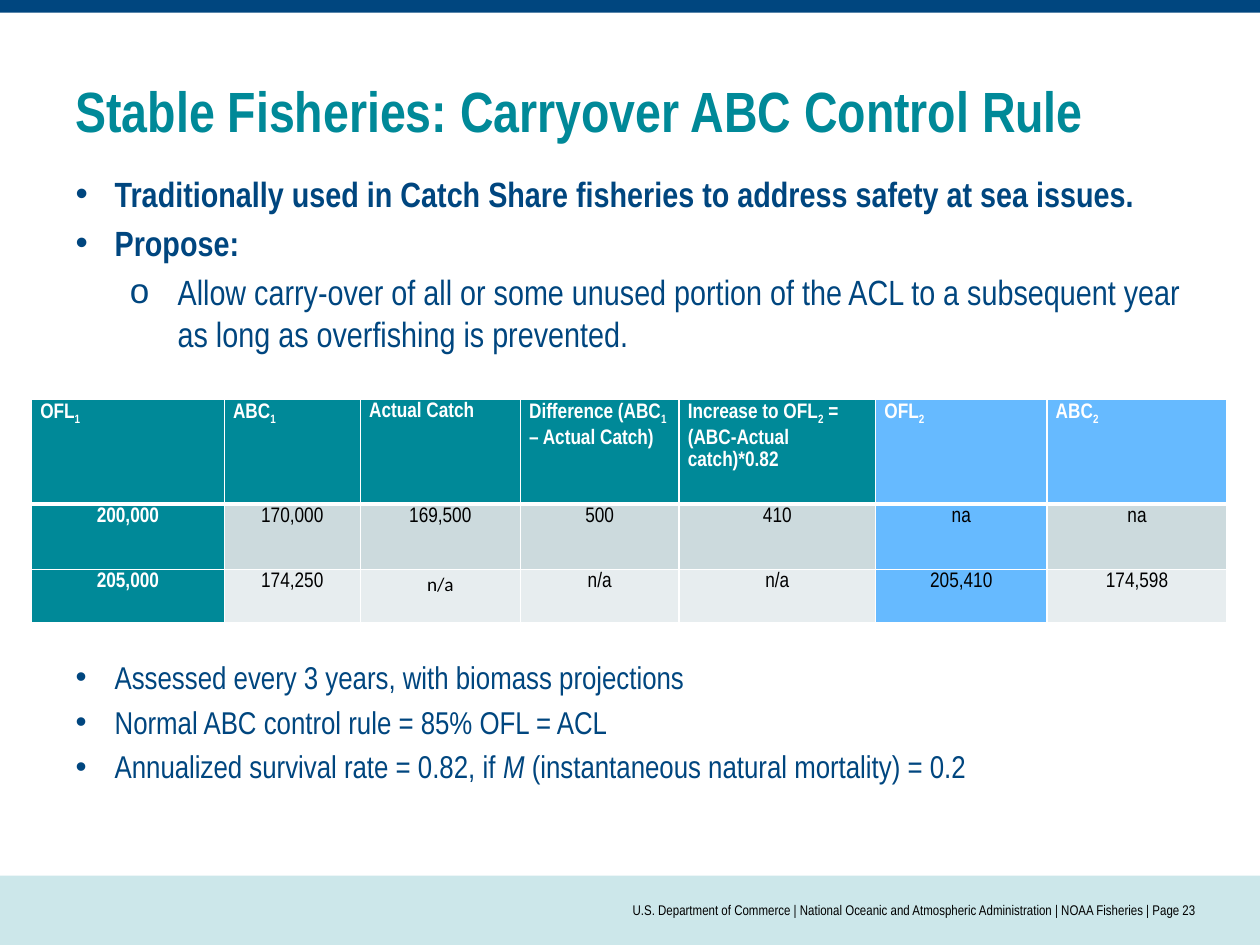
from pptx import Presentation
from pptx.dml.color import RGBColor
from pptx.enum.shapes import MSO_SHAPE
from pptx.enum.text import MSO_ANCHOR, MSO_AUTO_SIZE, PP_ALIGN
from pptx.oxml import parse_xml
from pptx.oxml.ns import nsdecls
from pptx.util import Inches, Pt

NAVY = RGBColor(0x00, 0x46, 0x7F)
TEAL = RGBColor(0x00, 0x89, 0x98)
PALE = RGBColor(0xCC, 0xE7, 0xEA)
BLUE = RGBColor(0x66, 0xBA, 0xFF)
GREY = RGBColor(0xCC, 0xDA, 0xDD)
LIGHT = RGBColor(0xE7, 0xED, 0xEF)
WHITE = RGBColor(0xFF, 0xFF, 0xFF)
BLACK = RGBColor(0x00, 0x00, 0x00)
FACE = "Arial Narrow"

WIDTHS = [1.53, 1.08, 1.27, 1.26, 1.56, 1.36, 1.43]
HEIGHTS = [0.83, 0.52, 0.42]
ROWS = [
    ["OFL|1", "ABC|1", "Actual Catch", "Difference (ABC|1| – Actual Catch)",
     "Increase to OFL|2| = (ABC-Actual catch)*0.82", "OFL|2", "ABC|2"],
    ["200,000", "170,000", "169,500", "500", "410", "na", "na"],
    ["205,000", "174,250", "n/a", "n/a", "n/a", "205,410", "174,598"],
]
RULES = [
    ("Traditionally used in Catch Share fisheries to address safety at sea issues.", 0, True),
    ("Propose:", 0, True),
    ("Allow carry-over of all or some unused portion of the ACL to a "
     "subsequent year as long as overfishing is prevented.", 1, False),
]
NOTES = [
    ("Assessed every 3 years, with biomass projections", 0, False),
    ("Normal ABC control rule = 85% OFL = ACL", 0, False),
    ("Annualized survival rate = 0.82, if |M| (instantaneous natural mortality) = 0.2", 0, False),
]
LEVELS = [("•", 0.31, 0.31), ("o", 0.81, 0.38)]


def place(shape, left, top, width, height):
    shape.left, shape.top = Inches(left), Inches(top)
    shape.width, shape.height = Inches(width), Inches(height)


def style(font, size, color, bold=False, face=FACE):
    font.size, font.name, font.bold = Pt(size), face, bold
    font.color.rgb = color


def write(para, text, size, color, bold=False, face=FACE):
    marked = []
    for i, part in enumerate(text.split("|")):
        run = para.add_run()
        run.text = part
        style(run.font, size, color, bold, face)
        if i % 2:
            marked.append(run)
    return marked


def add_bar(slide, top, height, color):
    bar = slide.shapes.add_shape(
        MSO_SHAPE.RECTANGLE, 0, Inches(top), Inches(10), Inches(height))
    bar.shadow.inherit = False
    bar.fill.solid()
    bar.fill.fore_color.rgb = color
    bar.line.fill.background()


def set_title(slide, text):
    title = slide.shapes.title
    place(title, 0.5, 0.5, 9, 0.74)
    frame = title.text_frame
    frame.text = text
    frame.auto_size = MSO_AUTO_SIZE.NONE
    frame.vertical_anchor = MSO_ANCHOR.MIDDLE
    para = frame.paragraphs[0]
    para.alignment = PP_ALIGN.LEFT
    style(para.runs[0].font, 32.4, TEAL, True)


def set_list(body, top, height, items, size):
    place(body, 0.5, top, 9, height)
    frame = body.text_frame
    frame.auto_size = MSO_AUTO_SIZE.NONE
    for i, (text, level, bold) in enumerate(items):
        para = frame.add_paragraph() if i else frame.paragraphs[0]
        para.level = level
        para.space_before = Pt(4 if i else 0)
        mark, left, hang = LEVELS[level]
        props = para._p.get_or_add_pPr()
        props.set("marL", str(Inches(left)))
        props.set("indent", str(-Inches(hang)))
        props.append(parse_xml(f'<a:buChar {nsdecls("a")} char="{mark}"/>'))
        for run in write(para, text, size, NAVY, bold):
            run.font.italic = True


def add_edges(cell, row):
    props = cell._tc.get_or_add_tcPr()
    for side in "LRTB":
        thick = (row, side) in ((0, "B"), (1, "T"))
        props.append(parse_xml(
            f'<a:ln{side} {nsdecls("a")} w="{Pt(3 if thick else 1)}"><a:solidFill>'
            f'<a:srgbClr val="{WHITE}"/></a:solidFill></a:ln{side}>'))


def pick_fill(row, col):
    if col == 5 or (row == 0 and col > 5):
        return BLUE
    if row == 0 or col == 0:
        return TEAL
    return GREY if row == 1 else LIGHT


def set_cell(cell, row, col, text):
    cell.margin_left = cell.margin_right = Inches(0.07)
    cell.margin_top = cell.margin_bottom = 0
    add_edges(cell, row)
    cell.fill.solid()
    cell.fill.fore_color.rgb = pick_fill(row, col)
    para = cell.text_frame.paragraphs[0]
    para.line_spacing = 1.15
    para.alignment = PP_ALIGN.CENTER if row else PP_ALIGN.LEFT
    head = row == 0 or col == 0
    size, face = (11, "Calibri") if (row, col) == (2, 2) else (12, FACE)
    for run in write(para, text, size, WHITE if head else BLACK, head, face):
        run._r.get_or_add_rPr().set("baseline", "-25000")


def add_grid(slide):
    table = slide.shapes.add_table(
        len(ROWS), len(WIDTHS), Inches(0.25), Inches(3.17),
        Inches(sum(WIDTHS)), Inches(sum(HEIGHTS))).table
    for col, width in zip(table.columns, WIDTHS):
        col.width = Inches(width)
    for row, height in zip(table.rows, HEIGHTS):
        row.height = Inches(height)
    for r, texts in enumerate(ROWS):
        for c, text in enumerate(texts):
            set_cell(table.cell(r, c), r, c, text)


def add_footer(slide, text):
    box = slide.shapes.add_textbox(Inches(2.5), Inches(6.95), Inches(7), Inches(0.55))
    frame = box.text_frame
    frame.word_wrap = True
    frame.margin_left = frame.margin_right = 0
    frame.vertical_anchor = MSO_ANCHOR.MIDDLE
    frame.text = text
    para = frame.paragraphs[0]
    para.alignment = PP_ALIGN.RIGHT
    style(para.runs[0].font, 8, BLACK)


def main():
    deck = Presentation()
    deck.slide_width, deck.slide_height = Inches(10), Inches(7.5)
    slide = deck.slides.add_slide(deck.slide_layouts[3])
    add_bar(slide, 6.95, 0.55, PALE)
    add_bar(slide, 0, 0.1, NAVY)
    set_title(slide, "Stable Fisheries: Carryover ABC Control Rule")
    set_list(slide.placeholders[1], 1.32, 1.7, RULES, 20)
    set_list(slide.placeholders[2], 5.17, 1.33, NOTES, 18)
    add_grid(slide)
    add_footer(slide, "U.S. Department of Commerce | National Oceanic and "
               "Atmospheric Administration | NOAA Fisheries | Page 23")
    deck.save("out.pptx")


if __name__ == "__main__":
    main()
